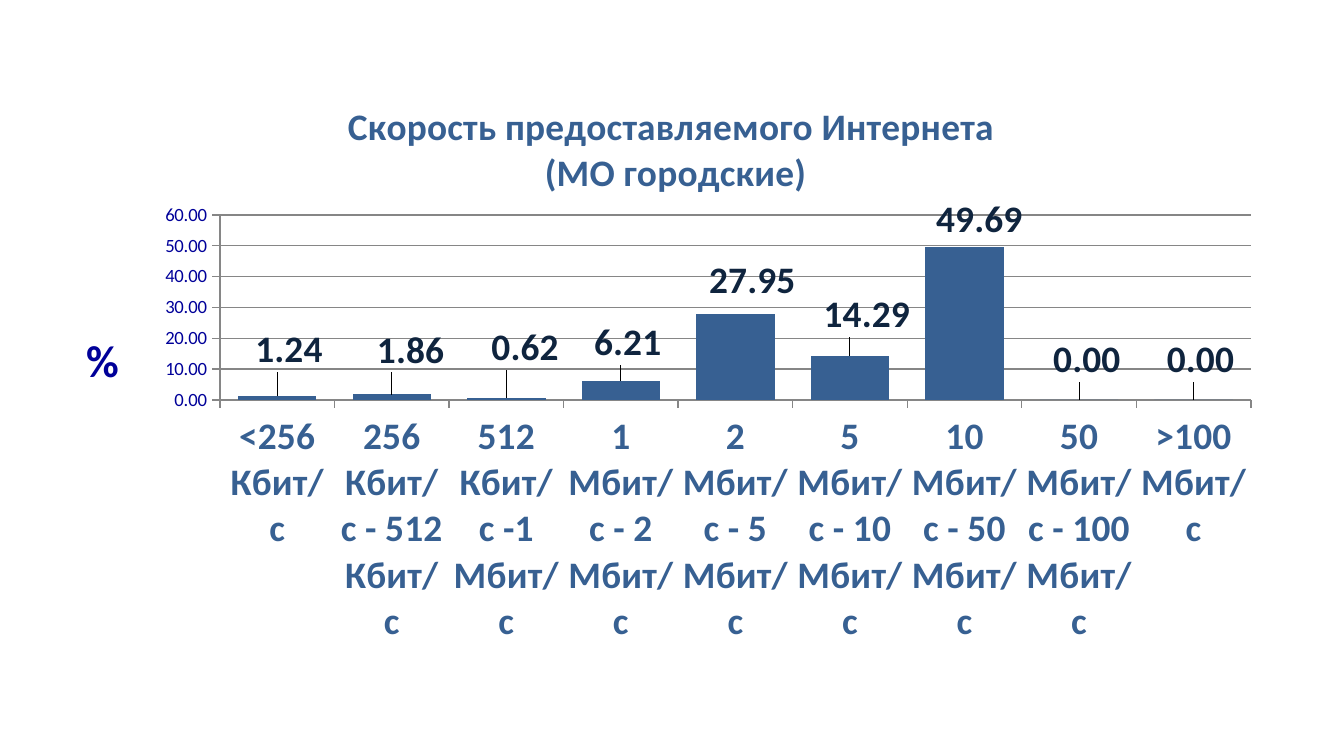
"""Build a slide with a column chart of Internet speeds in urban municipalities."""
from lxml.etree import SubElement
from pptx import Presentation
from pptx.chart.data import CategoryChartData
from pptx.dml.color import RGBColor
from pptx.enum.chart import XL_CHART_TYPE, XL_LABEL_POSITION, XL_TICK_MARK
from pptx.oxml import parse_xml
from pptx.oxml.ns import nsdecls, qn
from pptx.util import Pt

PX = 6804
SLIDE = (1344, 756)
CHART = (69, 69, 1207, 587)
PLOT = (220, 215, 1031, 185)
TITLE_AT = (344, 97)
UNIT_AT = (78, 322)
FONT = "Calibri"
COLORS = {"bar": "376092", "axis": "000099", "label": "0F243E", "line": "868686"}
TITLE = ["Скорость предоставляемого Интернета ", "(МО городские)"]
UNIT = "%"
SPEEDS = [
    ("<256 Кбит/с", 1.24, (12, -18)),
    ("256 Кбит/с - 512 Кбит/с", 1.86, (19, -16)),
    ("512 Кбит/с -1 Мбит/с", 0.62, (19, -22)),
    ("1 Мбит/с - 2 Мбит/с", 6.21, (7, -10)),
    ("2 Мбит/с - 5 Мбит/с", 27.95, (17, -5)),
    ("5 Мбит/с - 10 Мбит/с", 14.29, (17, -13)),
    ("10 Мбит/с - 50 Мбит/с", 49.69, (15, 1)),
    ("50 Мбит/с - 100 Мбит/с", 0, (8, -12)),
    (">100 Мбит/с", 0, (7, -12)),
]


def style(font, size, color, bold=False):
    font.name, font.size, font.bold = FONT, Pt(size), bold
    font.color.rgb = RGBColor.from_string(COLORS[color])


def layout_after(element, shift, size=None, inner=False):
    parent = element.getparent()
    for old in parent.findall(qn("c:layout")):
        parent.remove(old)
    layout = parse_xml(f"<c:layout {nsdecls('c')}><c:manualLayout/></c:layout>")
    manual = layout[0]
    settings = [("layoutTarget", "inner")] if inner else []
    if size or inner is None:
        settings += [("xMode", "edge"), ("yMode", "edge")]
    settings += [(key, f"{part / whole:.4f}") for key, part, whole in zip("xy", shift, CHART[2:])]
    if size:
        settings += [(key, f"{part / whole:.4f}") for key, part, whole in zip("wh", size, CHART[2:])]
    for key, value in settings:
        SubElement(manual, qn(f"c:{key}")).set("val", value)
    element.addnext(layout)


def from_chart_corner(x, y):
    return x - CHART[0], y - CHART[1]


def write_title(title, lines, at, size, color):
    frame = title.text_frame
    for number, line in enumerate(lines):
        paragraph = frame.add_paragraph() if number else frame.paragraphs[0]
        run = paragraph.add_run()
        run.text = line
        style(run.font, size, color, True)
    title_xml = frame._txBody.getparent().getparent()
    title_xml.find(qn("c:tx")).find(qn("c:rich")).find(qn("a:bodyPr")).set("rot", "0")
    layout_after(title_xml.find(qn("c:tx")), from_chart_corner(*at), inner=None)


def style_line(line):
    line.color.rgb = RGBColor.from_string(COLORS["line"])
    line.width = Pt(0.75)


def add_speed_chart(slide):
    data = CategoryChartData(number_format="0.00")
    data.categories = [name for name, _, _ in SPEEDS]
    data.add_series("Series 1", [value for _, value, _ in SPEEDS])
    box = [length * PX for length in CHART]
    chart = slide.shapes.add_chart(XL_CHART_TYPE.COLUMN_CLUSTERED, *box, data).chart
    chart.font.name, chart.font.size = FONT, Pt(10)
    chart.has_legend = False
    write_title(chart.chart_title, TITLE, TITLE_AT, 20, "bar")

    speeds, share = chart.category_axis, chart.value_axis
    for axis, size, color, bold in ((speeds, 20, "bar", True), (share, 10, "axis", False)):
        style(axis.tick_labels.font, size, color, bold)
        axis.major_tick_mark = XL_TICK_MARK.OUTSIDE
        axis.minor_tick_mark = XL_TICK_MARK.NONE
        style_line(axis.format.line)
        axis._element.find(qn("c:txPr")).find(qn("a:bodyPr")).set("rot", "0")
    share.minimum_scale, share.maximum_scale, share.major_unit = 0, 60, 10
    share.has_major_gridlines = True
    style_line(share.major_gridlines.format.line)
    share.tick_labels.number_format = "0.00"
    share.tick_labels.number_format_is_linked = False
    write_title(share.axis_title, [UNIT], UNIT_AT, 24, "axis")

    plot = chart.plots[0]
    plot.gap_width = 46
    plot.vary_by_categories = False
    bars = plot.series[0]
    bars.format.fill.solid()
    bars.format.fill.fore_color.rgb = RGBColor.from_string(COLORS["bar"])
    labels = bars.data_labels
    labels.show_value = True
    labels.number_format, labels.number_format_is_linked = "0.00", False
    labels.position = XL_LABEL_POSITION.OUTSIDE_END
    style(labels.font, 20, "label", True)
    for number in range(len(SPEEDS)):
        label = bars.points[number].data_label
        style(label.font, 20, "label", True)
        label.position = XL_LABEL_POSITION.OUTSIDE_END
    for label_xml, (_, _, shift) in zip(bars._element.iter(qn("c:dLbl")), SPEEDS):
        layout_after(label_xml.find(qn("c:idx")), shift)

    plot_area = plot._element.getparent()
    anchor = SubElement(plot_area, qn("c:layout"))
    plot_area.insert(0, anchor)
    marker = plot_area[0]
    layout = parse_xml(f"<c:extLst {nsdecls('c')}/>")
    marker.addprevious(layout)
    layout_after(layout, from_chart_corner(*PLOT[:2]), PLOT[2:], True)
    plot_area.remove(layout)


def main():
    deck = Presentation()
    deck.slide_width, deck.slide_height = (length * PX for length in SLIDE)
    add_speed_chart(deck.slides.add_slide(deck.slide_layouts[6]))
    deck.save("out.pptx")


if __name__ == "__main__":
    main()
